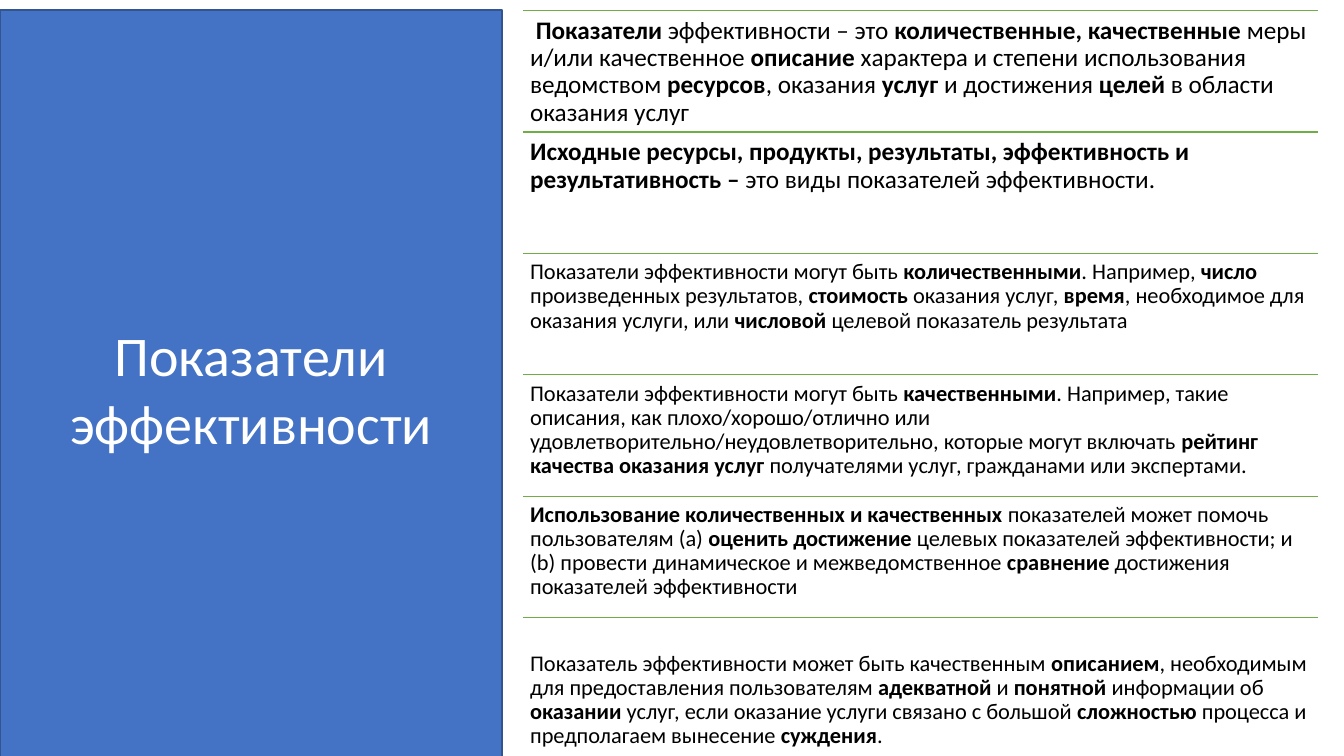
from dataclasses import dataclass
from functools import partial

from lxml.etree import SubElement
from pptx import Presentation
from pptx.dml.color import RGBColor
from pptx.enum.shapes import MSO_CONNECTOR, MSO_SHAPE
from pptx.enum.text import MSO_ANCHOR, PP_ALIGN
from pptx.oxml.ns import qn
from pptx.slide import Slide
from pptx.util import Pt


@dataclass(frozen=True)
class Theme:
    font: str = "Calibri"
    panel: RGBColor = RGBColor(0x44, 0x72, 0xC4)
    panel_edge: RGBColor = RGBColor(0x32, 0x54, 0x91)
    rule: RGBColor = RGBColor(0x70, 0xAD, 0x47)
    text: RGBColor = RGBColor(0, 0, 0)
    title: RGBColor = RGBColor(0xFF, 0xFF, 0xFF)
    title_size: int = 40
    large_size: int = 18
    body_size: int = 16


@dataclass(frozen=True)
class Span:
    text: str
    bold: bool = False


@dataclass(frozen=True)
class Row:
    """A block of text; rise lifts its box, lead lowers the text inside it."""
    size: int
    spans: tuple[Span, ...]
    rise: float = 0
    lead: float = 0


THEME = Theme()
Strong = partial(Span, bold=True)

PANEL_TOP, PANEL_WIDTH, PANEL_HEIGHT = 7.2, 358.6, 540
ROWS_LEFT, ROWS_TOP, ROWS_WIDTH = 373.7, 7.6, 568.1
ROW_HEIGHT = 86.7
INSET = 5

ROWS = (
    Row(THEME.large_size, (
        Span(" "), Strong("Показатели"), Span(" эффективности – это "),
        Strong("количественные, качественные"),
        Span(" меры и/или качественное "), Strong("описание "),
        Span("характера и степени использования ведомством "),
        Strong("ресурсов"), Span(", оказания "), Strong("услуг "),
        Span("и достижения "), Strong("целей "),
        Span("в области оказания услуг"),
    )),
    Row(THEME.large_size, (
        Strong("Исходные ресурсы, продукты, результаты, эффективность "
               "и результативность – "),
        Span("это виды показателей эффективности."),
    )),
    Row(THEME.body_size, (
        Span("Показатели эффективности могут быть "),
        Strong("количественными"), Span(". Например, "), Strong("число "),
        Span("произведенных результатов, "), Strong("стоимость "),
        Span("оказания услуг, "), Strong("время"),
        Span(", необходимое для оказания услуги, или "),
        Strong("числовой "), Span("целевой показатель результата"),
    )),
    Row(THEME.body_size, (
        Span("Показатели эффективности могут быть "),
        Strong("качественными"),
        Span(". Например, такие описания, как плохо/хорошо/отлично или "
             "удовлетворительно/неудовлетворительно, которые могут включать "),
        Strong("рейтинг качества оказания услуг"),
        Span(" получателями услуг, гражданами или экспертами."),
    )),
    Row(THEME.body_size, (
        Strong("Использование количественных и качественных "),
        Span("показателей может помочь пользователям (a) "),
        Strong("оценить достижение "),
        Span("целевых показателей эффективности; и (b) провести "
             "динамическое и межведомственное "),
        Strong("сравнение "), Span("достижения показателей эффективности"),
    )),
    Row(THEME.body_size, (
        Span("Показатель эффективности может быть качественным "),
        Strong("описанием"),
        Span(", необходимым для предоставления пользователям "),
        Strong("адекватной "), Span("и "), Strong("понятной "),
        Span("информации об "), Strong("оказании "),
        Span("услуг, если оказание услуги связано с большой "),
        Strong("сложностью "), Span("процесса и предполагаем вынесение "),
        Strong("суждения"), Span("."),
    ), rise=5.4, lead=25),
)


def add_span(para, span: Span, size: int, color: RGBColor) -> None:
    run = para.add_run()
    run.text = span.text
    run.font.name = THEME.font
    run.font.size = Pt(size)
    run.font.bold = span.bold
    run.font.color.rgb = color


def add_title_panel(page: Slide, title: str) -> None:
    panel = page.shapes.add_shape(MSO_SHAPE.RECTANGLE, Pt(0), Pt(PANEL_TOP),
                                  Pt(PANEL_WIDTH), Pt(PANEL_HEIGHT))
    panel.shadow.inherit = False
    panel.fill.solid()
    panel.fill.fore_color.rgb = THEME.panel
    panel.line.color.rgb = THEME.panel_edge
    panel.line.width = Pt(2)
    panel.text_frame.word_wrap = True
    panel.text_frame.vertical_anchor = MSO_ANCHOR.MIDDLE
    para = panel.text_frame.paragraphs[0]
    para.alignment = PP_ALIGN.CENTER
    add_span(para, Span(title), THEME.title_size, THEME.title)


def add_rule(page: Slide, top: float) -> None:
    rule = page.shapes.add_connector(MSO_CONNECTOR.STRAIGHT, Pt(ROWS_LEFT), Pt(top),
                                     Pt(ROWS_LEFT + ROWS_WIDTH), Pt(top))
    rule.line.color.rgb = THEME.rule
    rule.line.width = Pt(0.75)
    SubElement(rule._element.spPr, qn("a:effectLst"))


def add_row(page: Slide, row: Row, top: float) -> None:
    add_rule(page, top)
    box = page.shapes.add_textbox(Pt(ROWS_LEFT), Pt(top - row.rise),
                                  Pt(ROWS_WIDTH), Pt(ROW_HEIGHT))
    frame = box.text_frame
    frame.word_wrap = True
    frame.vertical_anchor = MSO_ANCHOR.TOP
    frame.margin_left = frame.margin_right = frame.margin_bottom = Pt(INSET)
    frame.margin_top = Pt(INSET + row.lead)
    para = frame.paragraphs[0]
    para.line_spacing = 0.9
    for span in row.spans:
        add_span(para, span, row.size, THEME.text)


def main() -> None:
    deck = Presentation()
    deck.slide_width, deck.slide_height = Pt(960), Pt(540)
    page = deck.slides.add_slide(deck.slide_layouts[6])
    add_title_panel(page, "Показатели эффективности")
    for index, row in enumerate(ROWS):
        add_row(page, row, ROWS_TOP + index * ROW_HEIGHT)
    deck.save("out.pptx")


if __name__ == "__main__":
    main()
